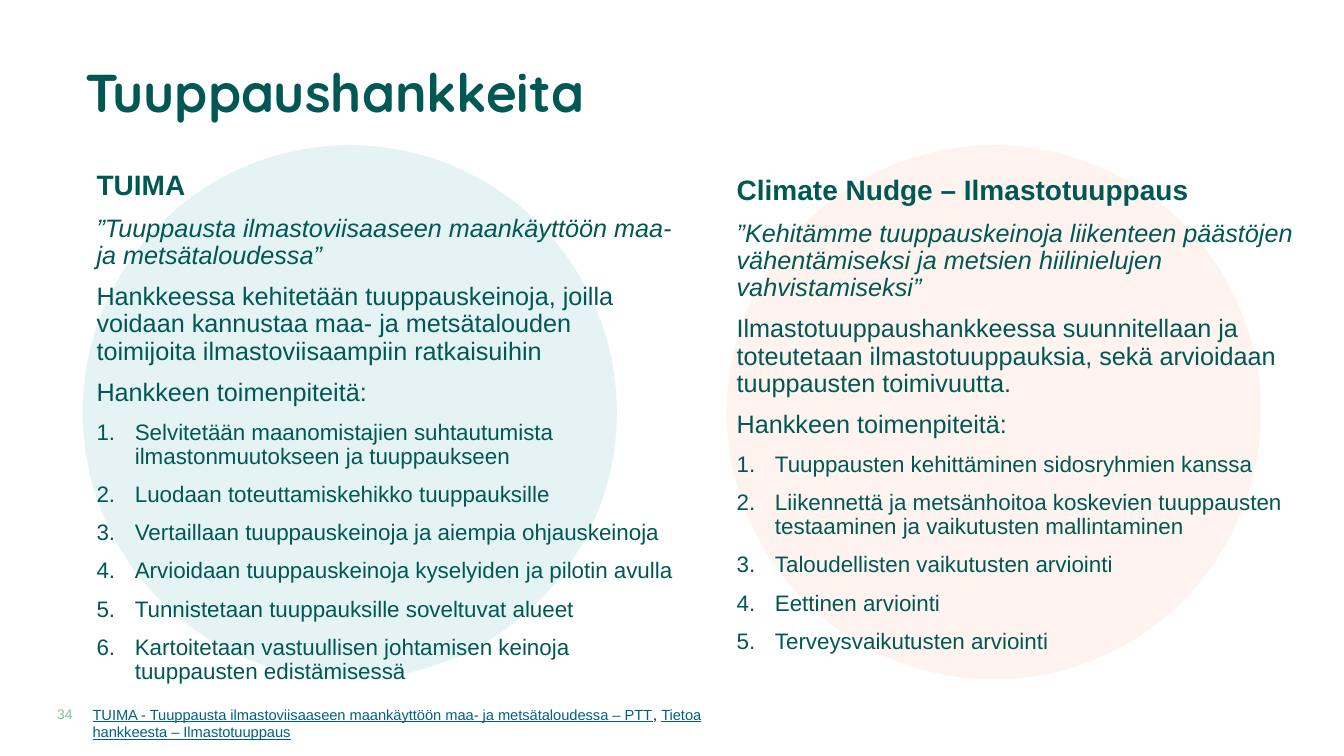
"""Build the slide on two nudging projects."""
from lxml import etree
from pptx import Presentation
from pptx.dml.color import RGBColor
from pptx.enum.shapes import MSO_SHAPE
from pptx.enum.text import MSO_ANCHOR, PP_ALIGN
from pptx.oxml.ns import qn
from pptx.util import Inches, Pt

OVAL = MSO_SHAPE.OVAL
TOP, MID, LOW = MSO_ANCHOR.TOP, MSO_ANCHOR.MIDDLE, MSO_ANCHOR.BOTTOM
LEFT, RIGHT = PP_ALIGN.LEFT, PP_ALIGN.RIGHT
CELL = Inches(1) // 12
COLS, ROWS = 160, 90
DARK, BLUE = "005854", "006085"


def paint(color, code):
    color.rgb = RGBColor.from_string(code)


def write(para, text, size=18, color=DARK, font="Arial", bold=False, italic=False, line=False):
    run = para.add_run()
    run.text = text
    run.font.name, run.font.size = font, Pt(size)
    run.font.bold, run.font.italic, run.font.underline = bold, italic, line
    paint(run.font.color, color)


deck = Presentation()
deck.slide_width, deck.slide_height = COLS * CELL, ROWS * CELL
slide = deck.slides.add_slide(deck.slide_layouts[6])

for col, code, alpha in [(9.84, "CFE9EA", 52), (86.52, "FCD9C9", 31)]:
    place = [int(n * CELL) for n in (col, 17.28, 63.6, 63.6)]
    disc = slide.shapes.add_shape(OVAL, *place)
    disc.shadow.inherit = False
    disc.fill.solid()
    paint(disc.fill.fore_color, code)
    tone = disc.fill.fore_color._xFill.find(qn("a:srgbClr"))
    etree.SubElement(tone, qn("a:alpha"), val=str(alpha * 1000))
    disc.line.fill.background()

head = dict(size=20, bold=True)
quote = dict(italic=True)
plain = {}
step = dict(size=16)
link = dict(size=10.5, color=BLUE, line=True)

tuima = [
    [("TUIMA", head)],
    [("”Tuuppausta ilmastoviisaaseen maankäyttöön maa- ja metsätaloudessa”", quote)],
    [("Hankkeessa kehitetään tuuppauskeinoja, joilla voidaan kannustaa maa- ja "
      "metsätalouden toimijoita ilmastoviisaampiin ratkaisuihin", plain)],
    [("Hankkeen toimenpiteitä:", plain)],
    [("Selvitetään maanomistajien suhtautumista ilmastonmuutokseen ja tuuppaukseen", step)],
    [("Luodaan toteuttamiskehikko tuuppauksille", step)],
    [("Vertaillaan tuuppauskeinoja ja aiempia ohjauskeinoja", step)],
    [("Arvioidaan tuuppauskeinoja kyselyiden ja pilotin avulla", step)],
    [("Tunnistetaan tuuppauksille soveltuvat alueet", step)],
    [("Kartoitetaan vastuullisen johtamisen keinoja tuuppausten edistämisessä", step)],
]
climate = [
    [("Climate Nudge – Ilmastotuuppaus", head)],
    [("”Kehitämme tuuppauskeinoja liikenteen päästöjen vähentämiseksi ja "
      "metsien hiilinielujen vahvistamiseksi”", quote)],
    [("Ilmastotuuppaushankkeessa suunnitellaan ja toteutetaan ilmastotuuppauksia, "
      "sekä arvioidaan tuuppausten toimivuutta.", plain)],
    [("Hankkeen toimenpiteitä:", plain)],
    [("Tuuppausten kehittäminen sidosryhmien kanssa", step)],
    [("Liikennettä ja metsänhoitoa koskevien tuuppausten testaaminen ja "
      "vaikutusten mallintaminen", step)],
    [("Taloudellisten vaikutusten arviointi", step)],
    [("Eettinen arviointi", step)],
    [("Terveysvaikutusten arviointi", step)],
]
title = [[("Tuuppaushankkeita", dict(size=38, font="Quicksand", bold=True))]]
number = [[("34", dict(size=10, color="84C497"))]]
sources = [[
    ("TUIMA - Tuuppausta ilmastoviisaaseen maankäyttöön maa- ja metsätaloudessa – PTT", link),
    (", ", dict(size=10.5, color="000000")),
    ("Tietoa hankkeesta – Ilmastotuuppaus", link),
]]

boxes = [
    ((9, 4.8, 142, 13), MID, LEFT, 0.9, title),
    ((10.32, 19.8, 71, 54), TOP, LEFT, 0.9, tuima),
    ((86.52, 20.4, 69.72, 54), TOP, LEFT, 0.9, climate),
    ((9.84, 83.4, 80, 5.4), TOP, LEFT, 1.0, sources),
    ((0.84, 83.64, 7.8, 2.4), LOW, RIGHT, 1.0, number),
]
for at, anchor, align, pitch, paras in boxes:
    frame = slide.shapes.add_textbox(*[int(n * CELL) for n in at]).text_frame
    frame.word_wrap = True
    frame.vertical_anchor = anchor
    if paras is number:
        frame.margin_left = frame.margin_right = 0
        frame.margin_top = frame.margin_bottom = 0
    for i, parts in enumerate(paras):
        para = frame.add_paragraph() if i else frame.paragraphs[0]
        para.alignment, para.line_spacing = align, pitch
        para.space_before = Pt(10 if i else 0)
        if parts[0][1] is step:
            props = para._p.get_or_add_pPr()
            props.set("marL", str(Inches(0.38)))
            props.set("indent", str(-Inches(0.38)))
            etree.SubElement(props, qn("a:buFont"), typeface="+mj-lt")
            etree.SubElement(props, qn("a:buAutoNum"), type="arabicPeriod")
        for text, look in parts:
            write(para, text, **look)

deck.save("out.pptx")
